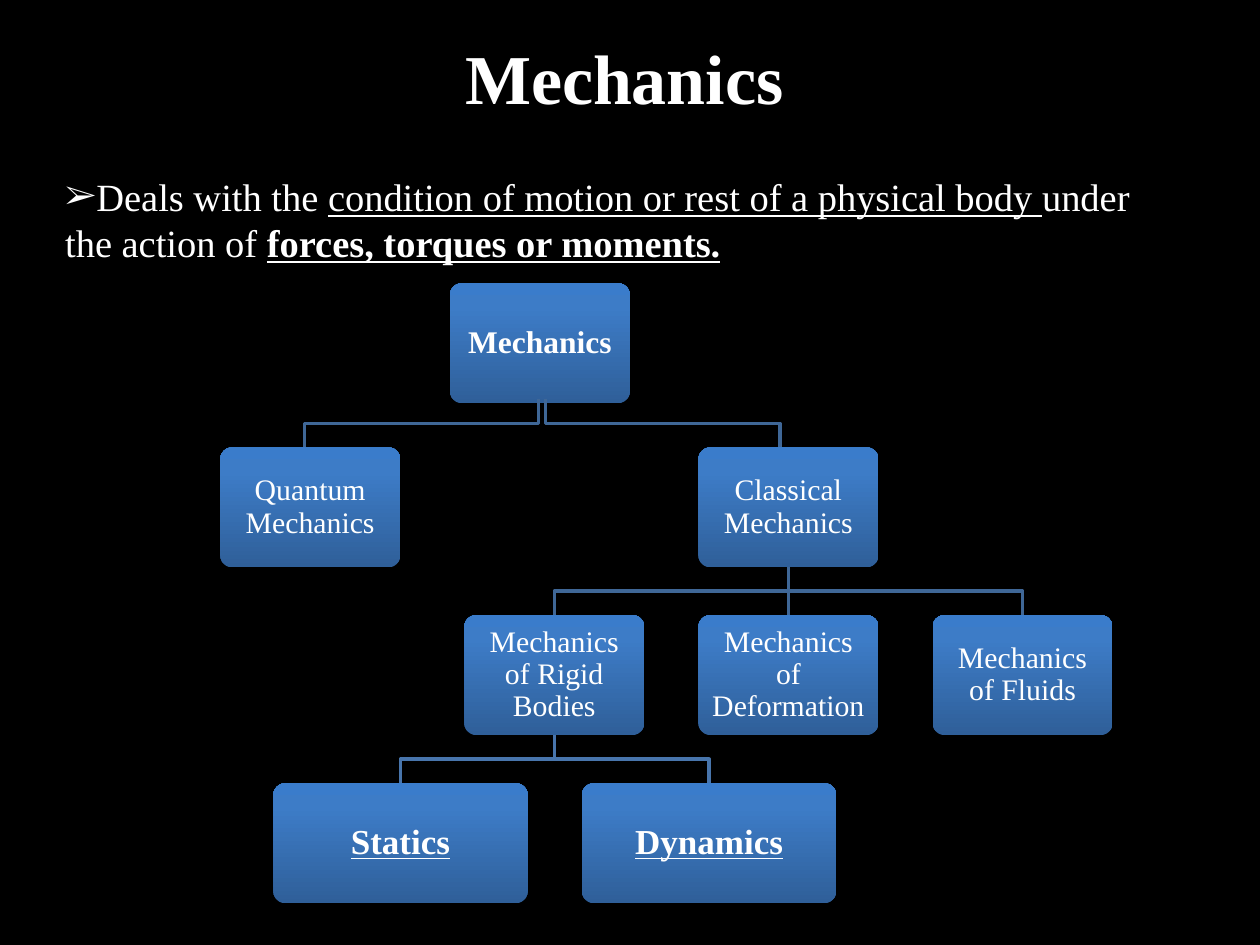
from copy import deepcopy
from lxml.etree import SubElement
from pptx import Presentation
from pptx.dml.color import RGBColor
from pptx.enum.shapes import MSO_CONNECTOR, MSO_SHAPE
from pptx.enum.text import MSO_ANCHOR, PP_ALIGN
from pptx.oxml.ns import qn
from pptx.util import Cm, Pt


class Theme:
    font = "Times New Roman"
    back = RGBColor.from_string("000000")
    text = RGBColor.from_string("FFFFFF")
    fade = [(0, "2F5F99"), (0.8, "3D7CC7"), (1, "3A7CCB")]
    line = RGBColor.from_string("3F6797")
    leaf = RGBColor.from_string("4875AC")
    title, body, root, node, end = Pt(40), Pt(22), Pt(18), Pt(17), Pt(20)
    width = Pt(2)


def write(para, text, size, bold=False, under=False):
    run = para.add_run()
    run.text = text
    font = run.font
    font.name, font.size, font.bold, font.underline = Theme.font, size, bold, under
    font.color.rgb = Theme.text


def style(item, color):
    item.line.color.rgb = color
    item.line.width = Theme.width


deck = Presentation()
deck.slide_width, deck.slide_height = Cm(25.4), Cm(19.05)
slide = deck.slides.add_slide(deck.slide_layouts[1])
slide.background.fill.solid()
slide.background.fill.fore_color.rgb = Theme.back
shapes = slide.shapes

title = shapes.title
title.left, title.top, title.width, title.height = Cm(5.92), Cm(0.56), Cm(13.33), Cm(1.96)
para = title.text_frame.paragraphs[0]
para.alignment = PP_ALIGN.CENTER
write(para, "Mechanics", Theme.title, bold=True)

body = slide.placeholders[1]
body.left, body.top, body.width, body.height = Cm(1.06), Cm(3.36), Cm(23.06), Cm(2.13)
para = body.text_frame.paragraphs[0]
para.space_before = Pt(0)
props = para._p.get_or_add_pPr()
props.set("marL", "0")
props.set("indent", "0")
SubElement(props, qn("a:buSzPct")).set("val", "88000")
SubElement(props, qn("a:buFont")).set("typeface", Theme.font)
SubElement(props, qn("a:buChar")).set("char", "➢")
write(para, "Deals with the ", Theme.body)
write(para, "condition of motion or rest of a physical body ", Theme.body, under=True)
write(para, "under the action of ", Theme.body)
write(para, "forces, torques or moments.", Theme.body, bold=True, under=True)

rows = [5.71, 9.02, 12.4, 15.79]
wide, broad, high = 3.63, 5.13, 2.42
mid, step = 14.08, 4.72
nodes = [
    ("Mechanics", 9.07, 0, wide, Theme.root, True, False),
    ("Quantum Mechanics", 4.44, 1, wide, Theme.node, False, False),
    ("Classical Mechanics", mid, 1, wide, Theme.node, False, False),
    ("Mechanics of Rigid Bodies", mid - step, 2, wide, Theme.node, False, False),
    ("Mechanics of Deformation", mid, 2, wide, Theme.node, False, False),
    ("Mechanics of Fluids", mid + step, 2, wide, Theme.node, False, False),
    ("Statics", 5.51, 3, broad, Theme.end, True, True),
    ("Dynamics", 11.73, 3, broad, Theme.end, True, True),
]
boxes = {}
for text, left, row, width, size, bold, under in nodes:
    box = shapes.add_shape(MSO_SHAPE.ROUNDED_RECTANGLE, Cm(left), Cm(rows[row]), Cm(width), Cm(high))
    box.adjustments[0] = 0.1
    box.shadow.inherit = False
    box.line.fill.background()
    box.fill.gradient()
    box.fill.gradient_angle = 90
    stops = box._element.spPr.find(qn("a:gradFill")).find(qn("a:gsLst"))
    stops.append(deepcopy(stops[-1]))
    for stop, (place, color) in zip(box.fill.gradient_stops, Theme.fade):
        stop.position = place
        stop.color.rgb = RGBColor.from_string(color)
    frame = box.text_frame
    frame.word_wrap = True
    frame.vertical_anchor = MSO_ANCHOR.MIDDLE
    frame.margin_left = frame.margin_right = Cm(0.17)
    frame.margin_top = frame.margin_bottom = Cm(0.17)
    para = frame.paragraphs[0]
    para.alignment = PP_ALIGN.CENTER
    para.line_spacing = 0.9
    write(para, text, size, bold, under)
    boxes[text] = box

half = wide / 2
bends = [
    (10.86, 8.05, 6.14, rows[1], Theme.line),
    (11, 8.05, 15.72, rows[1], Theme.line),
    (mid + half, rows[1] + high, mid - step + half, rows[2], Theme.line),
    (mid + half, rows[1] + high, mid + step + half, rows[2], Theme.line),
    (mid - step + half, rows[2] + high, 5.51 + broad / 2, rows[3], Theme.leaf),
    (mid - step + half, rows[2] + high, 11.73 + broad / 2, rows[3], Theme.leaf),
]
for left, top, right, base, color in bends:
    turn = Cm((top + base) / 2)
    pen = shapes.build_freeform(Cm(left), Cm(top))
    pen.add_line_segments([(Cm(left), turn), (Cm(right), turn), (Cm(right), Cm(base))], close=False)
    bend = pen.convert_to_shape()
    bend.fill.background()
    bend.shadow.inherit = False
    style(bend, color)

link = shapes.add_connector(MSO_CONNECTOR.STRAIGHT, Cm(mid + half), Cm(rows[1] + high), Cm(mid + half), Cm(rows[2]))
link.begin_connect(boxes["Classical Mechanics"], 2)
link.end_connect(boxes["Mechanics of Deformation"], 0)
style(link, Theme.line)
SubElement(link._element.spPr, qn("a:effectLst"))

deck.save("out.pptx")
